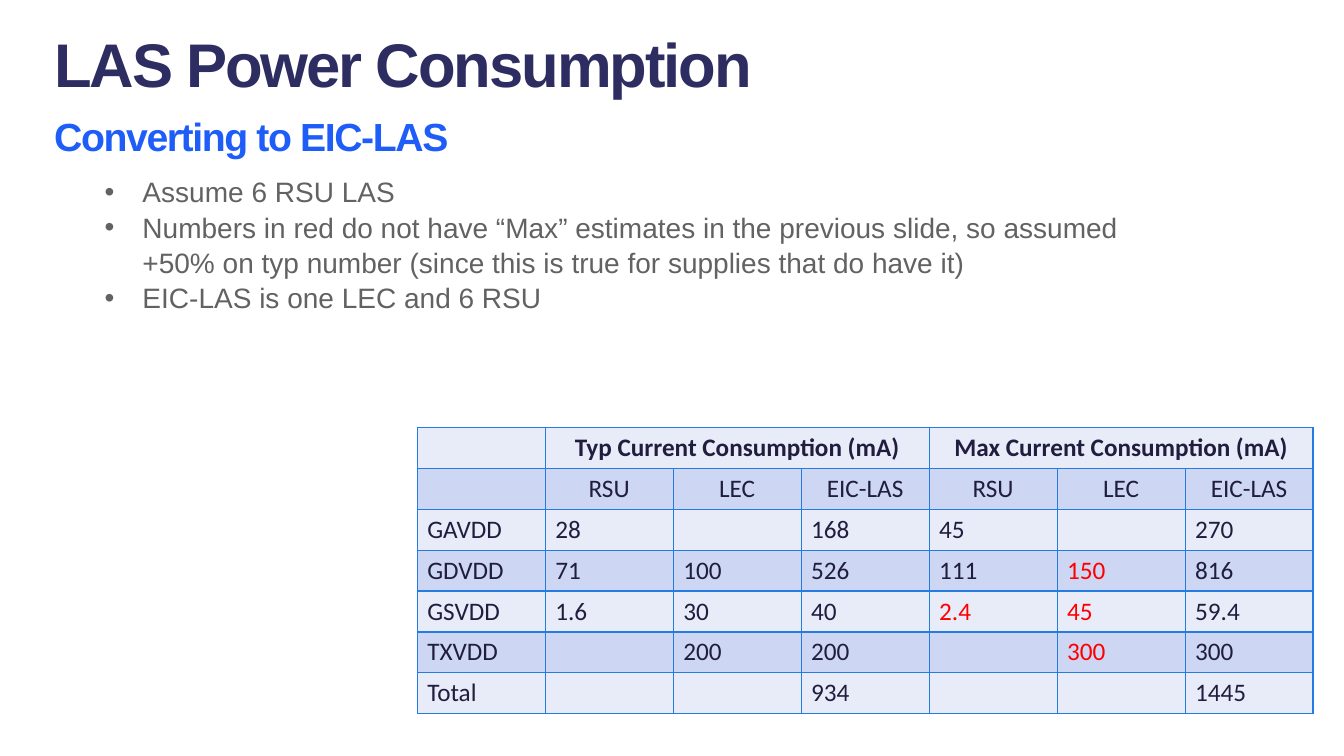
"""Build the LAS power consumption slide."""
from lxml.etree import SubElement
from pptx import Presentation
from pptx.dml.color import RGBColor
from pptx.enum.text import MSO_ANCHOR, PP_ALIGN
from pptx.oxml import parse_xml
from pptx.oxml.ns import nsdecls, qn
from pptx.util import Pt


class Theme:
    navy, blue, grey = "2E2D62", "1E5DF8", "626262"
    ink, red, border = "201D3E", "FF0000", "247BE1"
    bands = ("E8ECF9", "CDD7F4")
    sans, table_font = "Arial", "Calibri"
    title, subtitle, body, cell = 44, 28, 20, 18


def write(p, text, size, color, font=Theme.sans, bold=False, spacing=0, align=None):
    p.alignment = align
    r = p.add_run()
    r.text = text
    r.font.name = font
    r.font.size = Pt(size)
    r.font.bold = bold
    r.font.color.rgb = RGBColor.from_string(color)
    if spacing:
        r.font._element.set("spc", str(round(spacing * 100)))


def style_cell(cell, fill):
    cell.fill.solid()
    cell.fill.fore_color.rgb = RGBColor.from_string(fill)
    tcPr = cell._tc.get_or_add_tcPr()
    for i, side in enumerate(("lnL", "lnR", "lnT", "lnB")):
        tcPr.insert(i, parse_xml(
            f'<a:{side} {nsdecls("a")} w="12700"><a:solidFill>'
            f'<a:srgbClr val="{Theme.border}"/></a:solidFill></a:{side}>'))


prs = Presentation()
prs.slide_width, prs.slide_height = Pt(960), Pt(540)
s = prs.slides.add_slide(prs.slide_layouts[6])

tf = s.shapes.add_textbox(Pt(31.7), Pt(14.4), Pt(920), Pt(60.5)).text_frame
tf.word_wrap = True
tf.vertical_anchor = MSO_ANCHOR.BOTTOM
write(tf.paragraphs[0], "LAS Power Consumption", Theme.title, Theme.navy,
      bold=True, spacing=-1.5)

columns = ["RSU", "LEC", "EIC-LAS"]
rows = [
    ["", "Typ Current Consumption (mA)", "", "", "Max Current Consumption (mA)", "", ""],
    ["", *columns, *columns],
    ["GAVDD", "28", "", "168", "45", "", "270"],
    ["GDVDD", "71", "100", "526", "111", "150", "816"],
    ["GSVDD", "1.6", "30", "40", "2.4", "45", "59.4"],
    ["TXVDD", "", "200", "200", "", "300", "300"],
    ["Total", "", "", "934", "", "", "1445"],
]
assumed = {(3, 5), (4, 4), (4, 5), (5, 5)}

table = s.shapes.add_table(len(rows), len(rows[0]), Pt(298), Pt(305.4),
                           Pt(640), Pt(204.4)).table
table.first_row = table.horz_banding = False
for row in table.rows:
    row.height = Pt(29.2)
for i, row in enumerate(rows):
    for j, text in enumerate(row):
        cell = table.cell(i, j)
        style_cell(cell, Theme.bands[i % 2])
        if text:
            write(cell.text_frame.paragraphs[0], text, Theme.cell,
                  Theme.red if (i, j) in assumed else Theme.ink,
                  font=Theme.table_font, bold=i == 0,
                  align=PP_ALIGN.CENTER if i < 2 else PP_ALIGN.LEFT)
for j in (1, 4):
    table.cell(0, j).merge(table.cell(0, j + 2))

tf = s.shapes.add_textbox(Pt(31.7), Pt(74.9), Pt(797), Pt(148.3)).text_frame
tf.word_wrap = True
p = tf.paragraphs[0]
p.line_spacing = 1.05
p.space_after = Pt(10)
write(p, "Converting to EIC-LAS", Theme.subtitle, Theme.blue, bold=True, spacing=-1)

bullets = [
    "Assume 6 RSU LAS",
    "Numbers in red do not have “Max” estimates in the previous slide, so assumed "
    "+50% on typ number (since this is true for supplies that do have it)",
    "EIC-LAS is one LEC and 6 RSU",
]
for text in bullets:
    p = tf.add_paragraph()
    p.level = 1
    p.line_spacing = 1.05
    pPr = p._p.get_or_add_pPr()
    pPr.set("marL", str(Pt(63)))
    pPr.set("indent", str(Pt(-27)))
    SubElement(pPr, qn("a:buFont"), typeface=Theme.sans)
    SubElement(pPr, qn("a:buChar"), char="•")
    write(p, text, Theme.body, Theme.grey)

prs.save("out.pptx")
